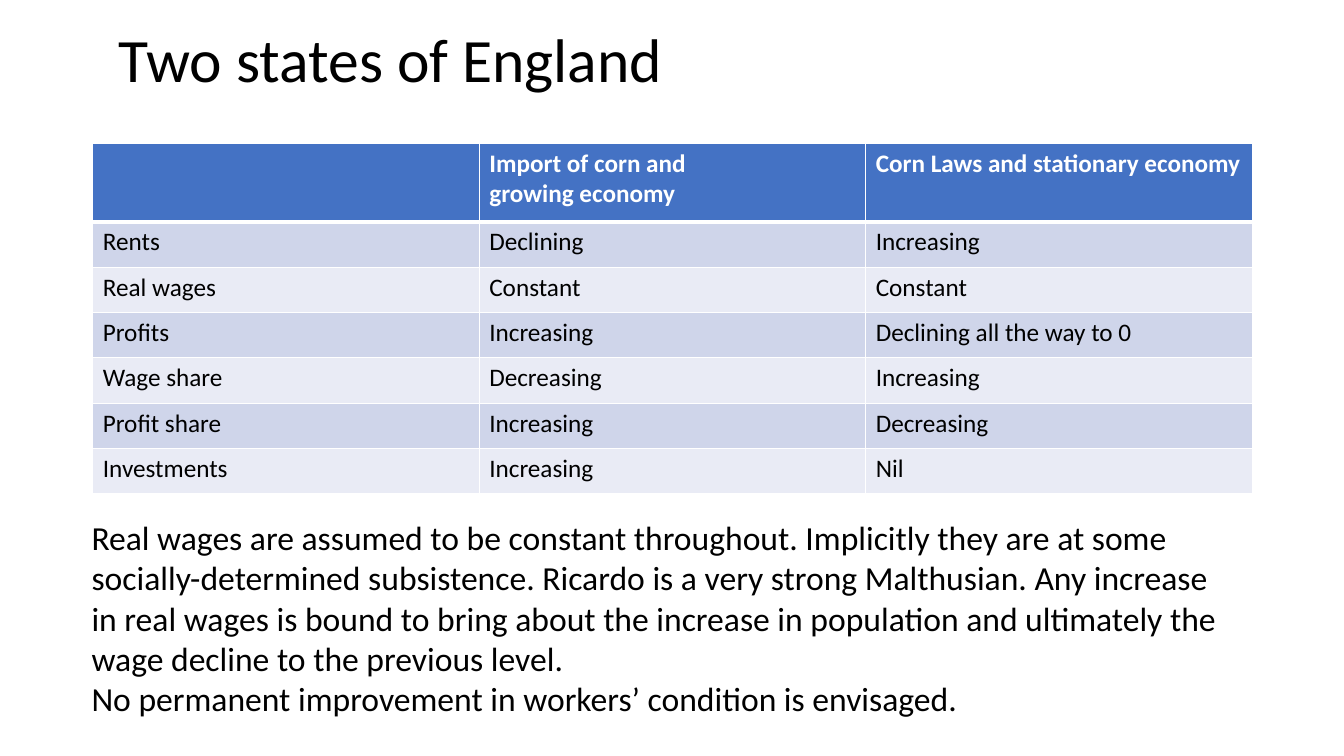
"""Build the slide comparing the two states of England."""
from dataclasses import dataclass
from itertools import product

from lxml.etree import SubElement
from pptx import Presentation
from pptx.dml.color import RGBColor
from pptx.enum.text import MSO_ANCHOR, MSO_AUTO_SIZE, PP_ALIGN
from pptx.oxml.ns import qn
from pptx.util import Pt

PX = 9144
FONT = "Calibri"
COLORS = {"text": "000000", "white": "FFFFFF", "header": "4472C4",
          "odd": "CFD5EA", "even": "E9EBF5"}


@dataclass(frozen=True)
class Box:
    left: int
    top: int
    width: int
    height: int

    def emu(self) -> tuple[int, ...]:
        return tuple(v * PX for v in (self.left, self.top, self.width, self.height))


@dataclass(frozen=True)
class RowStyle:
    fill: str
    color: str
    bold: bool
    top: int
    bottom: int


TITLE_BOX = Box(108, 21, 1134, 82)
TABLE_BOX = Box(92, 142, 1150, 348)
NOTE_BOX = Box(81, 508, 1150, 242)
HEADER_HEIGHT, ROW_HEIGHT = 78, 45
ROWS = [
    ("", "Import of corn and\ngrowing economy", "Corn Laws and stationary economy"),
    ("Rents", "Declining", "Increasing"),
    ("Real wages", "Constant", "Constant"),
    ("Profits", "Increasing", "Declining all the way to 0"),
    ("Wage share", "Decreasing", "Increasing"),
    ("Profit share", "Increasing", "Decreasing"),
    ("Investments", "Increasing", "Nil"),
]
NOTE = (
    "Real wages are assumed to be constant throughout. Implicitly they are at some "
    "socially-determined subsistence. Ricardo is a very strong Malthusian. Any increase "
    "in real wages is bound to bring about the increase in population and ultimately the "
    "wage decline to the previous level.\n"
    "No permanent improvement in workers’ condition is envisaged."
)


def write(tf, text: str, size: int, color: str = "text", bold: bool = False) -> None:
    tf.text = text
    for p in tf.paragraphs:
        p.alignment = PP_ALIGN.LEFT
        p.font.name = FONT
        p.font.size = Pt(size)
        p.font.bold = bold
        p.font.color.rgb = RGBColor.from_string(COLORS[color])


def add_title(s) -> None:
    sp = s.shapes.title
    sp.left, sp.top, sp.width, sp.height = TITLE_BOX.emu()
    tf = sp.text_frame
    tf.auto_size = MSO_AUTO_SIZE.NONE
    tf.vertical_anchor = MSO_ANCHOR.MIDDLE
    write(tf, "Two states of England", 44)
    tf.paragraphs[0].line_spacing = 0.9


def row_style(row: int) -> RowStyle:
    if row == 0:
        return RowStyle("header", "white", True, 1, 3)
    return RowStyle("odd" if row % 2 else "even", "text", False, 3 if row == 1 else 1, 1)


def style_cell(cell, style: RowStyle) -> None:
    tc_pr = cell._tc.get_or_add_tcPr()
    for side, width in (("L", 1), ("R", 1), ("T", style.top), ("B", style.bottom)):
        ln = SubElement(tc_pr, qn(f"a:ln{side}"), w=str(Pt(width)))
        fill = SubElement(ln, qn("a:solidFill"))
        SubElement(fill, qn("a:srgbClr"), val=COLORS["white"])
    cell.fill.solid()
    cell.fill.fore_color.rgb = RGBColor.from_string(COLORS[style.fill])


def add_comparison(s) -> None:
    n_rows, n_cols = len(ROWS), len(ROWS[0])
    table = s.shapes.add_table(n_rows, n_cols, *TABLE_BOX.emu()).table
    for i, row in enumerate(table.rows):
        row.height = (ROW_HEIGHT if i else HEADER_HEIGHT) * PX
    for i, j in product(range(n_rows), range(n_cols)):
        cell, style = table.cell(i, j), row_style(i)
        write(cell.text_frame, ROWS[i][j], 18, style.color, style.bold)
        style_cell(cell, style)


def add_note(s) -> None:
    tf = s.shapes.add_textbox(*NOTE_BOX.emu()).text_frame
    tf.word_wrap = True
    tf.auto_size = MSO_AUTO_SIZE.SHAPE_TO_FIT_TEXT
    write(tf, NOTE, 24)


def main() -> None:
    prs = Presentation()
    prs.slide_width, prs.slide_height = 1333 * PX, 750 * PX
    s = prs.slides.add_slide(prs.slide_layouts[5])
    add_title(s)
    add_comparison(s)
    add_note(s)
    prs.save("out.pptx")


if __name__ == "__main__":
    main()
